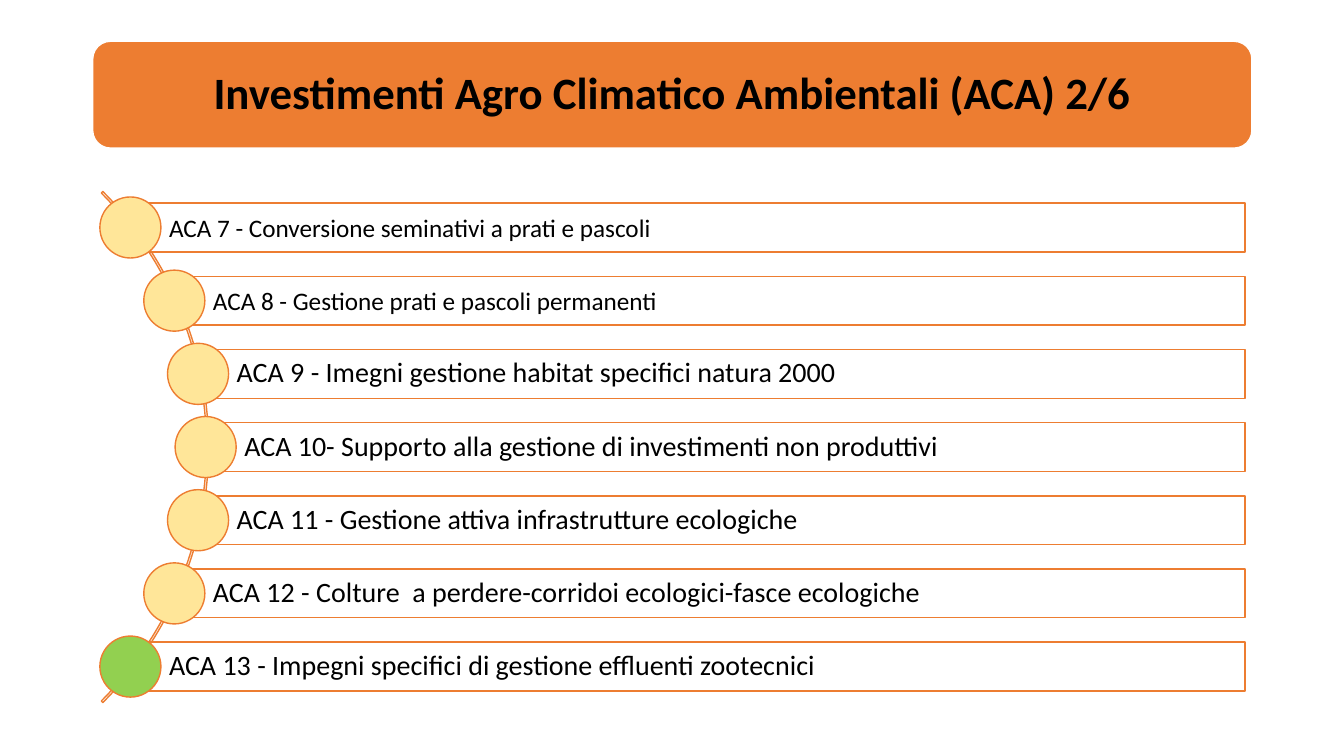
from math import sqrt

from pptx import Presentation
from pptx.dml.color import RGBColor
from pptx.enum.shapes import MSO_SHAPE as Preset
from pptx.enum.text import MSO_ANCHOR as Anchor, PP_ALIGN as Align
from pptx.util import Inches, Pt

COLORS = {
    "orange": "ED7D31",
    "yellow": "FFE699",
    "green": "92D050",
    "white": "FFFFFF",
    "black": "000000",
}

# Grid of square cells, 75 rows high and 133.33 columns wide
CELL = Inches(0.1)
COLUMNS, ROWS = 133.33, 75

# Measures in grid cells
RIGHT_EDGE = 123.5
BAR_HEIGHT = 4.84
BAR_PITCH = 7.26
DOT_SIZE = 6.06
ARC_SIZE = 71.7
CURVE_X, CURVE_Y = -15.1, 44.35   # centre of the curve that the dots follow
CURVE_RADIUS = 35.5

# Text, font size, line spacing, dot colour
ACTIONS = [
    ("ACA 7 - Conversione seminativi a prati e pascoli", 18, 1.0, "yellow"),
    ("ACA 8 - Gestione prati e pascoli permanenti", 18, 1.0, "yellow"),
    ("ACA 9 - Imegni gestione habitat specifici natura 2000", 20, 0.9, "yellow"),
    ("ACA 10- Supporto alla gestione di investimenti non produttivi", 20, 0.9, "yellow"),
    ("ACA 11 - Gestione attiva infrastrutture ecologiche", 20, 0.9, "yellow"),
    ("ACA 12 - Colture  a perdere-corridoi ecologici-fasce ecologiche", 20, 0.9, "yellow"),
    ("ACA 13 - Impegni specifici di gestione effluenti zootecnici", 20, 0.9, "green"),
]


def cells(count):
    return round(count * CELL)


def color(name):
    return RGBColor.from_string(COLORS[name])


def add_preset(slide, preset, left, top, width, height, fill=None, line="orange"):
    shape = slide.shapes.add_shape(
        preset, cells(left), cells(top), cells(width), cells(height))
    shape.shadow.inherit = False
    if fill:
        shape.fill.solid()
        shape.fill.fore_color.rgb = color(fill)
    else:
        shape.fill.background()
    shape.line.color.rgb = color(line)
    shape.line.width = Pt(1)
    return shape


def write(shape, text, size, bold=False, align=Align.JUSTIFY, spacing=0.9,
          left=0.5, right=0.5):
    frame = shape.text_frame
    frame.word_wrap = True
    frame.vertical_anchor = Anchor.MIDDLE
    frame.margin_left, frame.margin_right = cells(left), cells(right)
    paragraph = frame.paragraphs[0]
    paragraph.alignment = align
    paragraph.line_spacing = spacing
    run = paragraph.add_run()
    run.text = text
    run.font.name = "Calibri"
    run.font.size = Pt(size)
    run.font.bold = bold
    run.font.color.rgb = color("black")


def add_title(slide, text):
    banner = add_preset(slide, Preset.ROUNDED_RECTANGLE, 9.2, 4.1, 115, 10.6,
                        fill="orange", line="white")
    write(banner, text, 32, bold=True, align=Align.CENTER)


def add_arc(slide):
    arc = add_preset(slide, Preset.BLOCK_ARC, -51, CURVE_Y - ARC_SIZE / 2,
                     ARC_SIZE, ARC_SIZE)
    # Start angle, end angle and thickness
    for index, value in enumerate((189, 27, 0.003)):
        arc.adjustments[index] = value


def add_action(slide, offset, text, size, spacing, dot_color):
    """Draw a bar and its dot, offset vertically from the curve's centre."""
    x = CURVE_X + sqrt(CURVE_RADIUS ** 2 - offset ** 2)
    y = CURVE_Y + offset
    bar = add_preset(slide, Preset.RECTANGLE, x, y - BAR_HEIGHT / 2,
                     RIGHT_EDGE - x, BAR_HEIGHT)
    write(bar, text, size, spacing=spacing, left=3.84)
    add_preset(slide, Preset.OVAL, x - DOT_SIZE / 2, y - DOT_SIZE / 2,
               DOT_SIZE, DOT_SIZE, fill=dot_color)


def main():
    presentation = Presentation()
    presentation.slide_width = cells(COLUMNS)
    presentation.slide_height = cells(ROWS)
    slide = presentation.slides.add_slide(presentation.slide_layouts[6])

    # Title banner
    add_title(slide, "Investimenti Agro Climatico Ambientali (ACA) 2/6")

    # Curved list
    add_arc(slide)
    middle = (len(ACTIONS) - 1) / 2
    for index, action in enumerate(ACTIONS):
        add_action(slide, (index - middle) * BAR_PITCH, *action)

    presentation.save("out.pptx")


if __name__ == "__main__":
    main()
